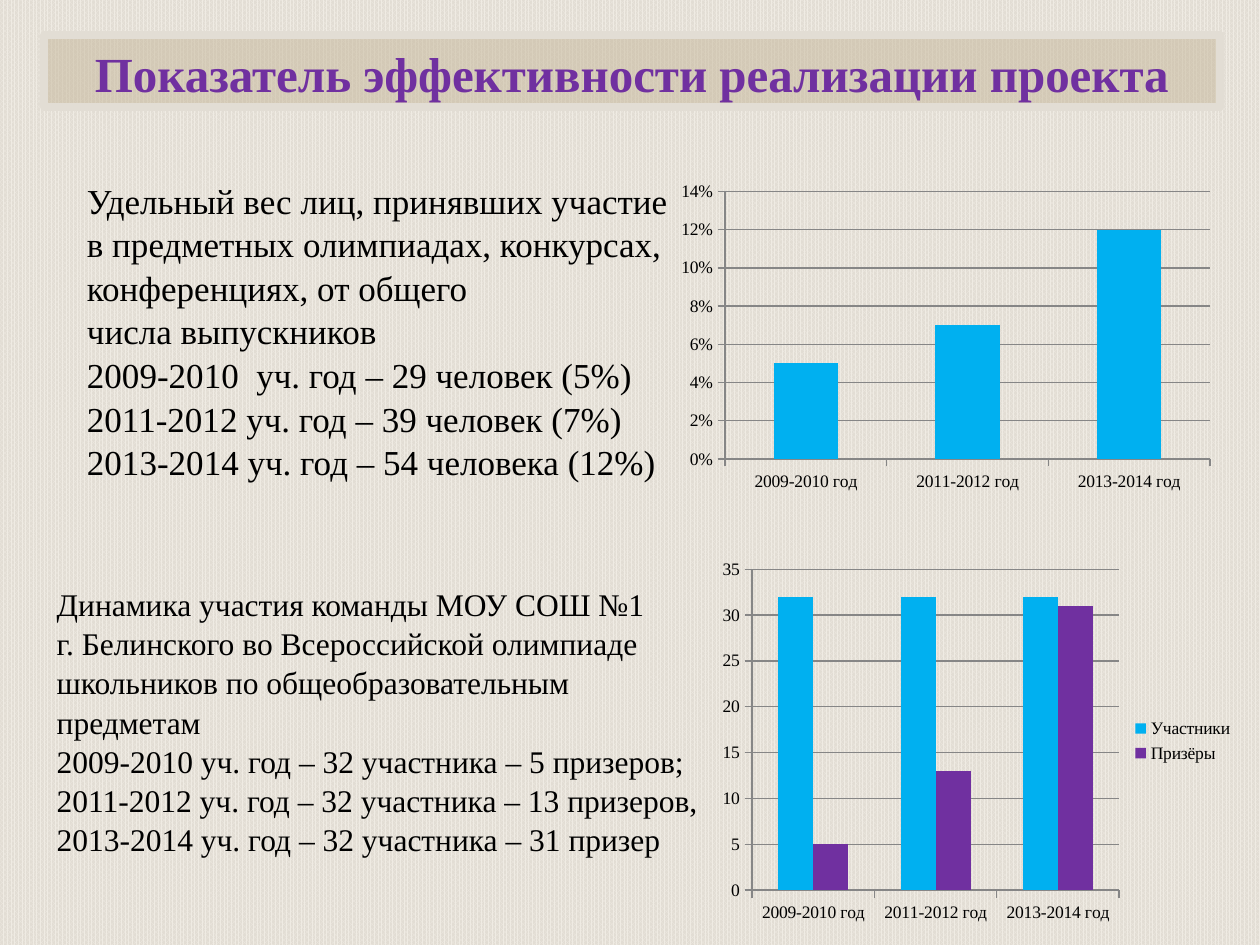
from lxml import etree
from pptx import Presentation
from pptx.chart import data
from pptx.dml import color
from pptx.enum import chart as ch, dml, text
from pptx.oxml import ns
from pptx.util import Inches, Pt

RGB = color.RGBColor
BLACK = RGB(0, 0, 0)
GRAY = RGB(0x86, 0x86, 0x86)
PURPLE = RGB(0x70, 0x30, 0xA0)
BLUE = RGB(0x00, 0xB0, 0xF0)
SAND = RGB(0xC5, 0xB6, 0x99)
PALE = RGB(0xEF, 0xEB, 0xE3)
STONE = RGB(0xE2, 0xDD, 0xD4)
FACE = "Times New Roman"

YEARS = ["2009-2010 год", "2011-2012 год", "2013-2014 год"]
TITLE = "Показатель эффективности реализации проекта"
SHARE = [
    "Удельный вес лиц, принявших участие",
    "в предметных олимпиадах, конкурсах, конференциях, от общего",
    "числа выпускников",
    "2009-2010  уч. год – 29 человек (5%)",
    "2011-2012 уч. год – 39 человек (7%)",
    "2013-2014 уч. год – 54 человека (12%)",
]
TEAM = [
    "Динамика участия команды МОУ СОШ №1",
    "г. Белинского во Всероссийской олимпиаде школьников по общеобразовательным предметам",
    "2009-2010 уч. год – 32 участника – 5 призеров;",
    "2011-2012 уч. год – 32 участника – 13 призеров,",
    "2013-2014 уч. год – 32 участника – 31 призер",
]


def apply(obj, **vals):
    """Set each named value on an object."""
    for name, val in vals.items():
        setattr(obj, name, val)


def style(font, size, tint, bold=False):
    """Give a font its face, size, colour and weight."""
    apply(font, name=FACE, size=Pt(size), bold=bold)
    font.color.rgb = tint


def place(shape, box):
    """Move a shape to a box given in inches."""
    sides = ("left", "top", "width", "height")
    apply(shape, **{side: Inches(val) for side, val in zip(sides, box)})


def fill_text(shape, lines, size, tint, anchor, align, bold=False):
    """Write plain paragraphs without bullets."""
    frame = shape.text_frame
    frame.text = "\n".join(lines)
    apply(frame, word_wrap=True, auto_size=text.MSO_AUTO_SIZE.NONE,
          vertical_anchor=anchor)
    for para in frame.paragraphs:
        apply(para, alignment=align, space_before=Pt(0), line_spacing=1.04)
        props = para._p.get_or_add_pPr()
        apply(props, marL=0) if hasattr(props, "marL") else props.set("marL", "0")
        props.set("indent", "0")
        etree.SubElement(props, ns.qn("a:buNone"))
        for run in para.runs:
            style(run.font, size, tint, bold)


def add_title(shape, box):
    """Make the framed, half-clear title band."""
    place(shape, box)
    shape.fill.solid()
    shape.fill.fore_color.rgb = SAND
    tint = shape.fill._xPr.find(".//" + ns.qn("a:srgbClr"))
    etree.SubElement(tint, ns.qn("a:alpha"), val="50000")
    shape.line.color.rgb = STONE
    shape.line.width = Pt(4.5)
    fill_text(shape, [TITLE], 28, PURPLE, text.MSO_ANCHOR.TOP,
              text.PP_ALIGN.CENTER, True)


def add_body(shape, box, lines, size):
    """Make one block of facts."""
    place(shape, box)
    fill_text(shape, lines, size, BLACK, text.MSO_ANCHOR.MIDDLE,
              text.PP_ALIGN.LEFT)


def add_bars(slide, box, series, form, step, top, legend=False):
    """Add a column chart by school year."""
    table = data.CategoryChartData(number_format=form)
    table.categories = YEARS
    for name, vals, _ in series:
        table.add_series(name, vals)
    chart = slide.shapes.add_chart(
        ch.XL_CHART_TYPE.COLUMN_CLUSTERED, *map(Inches, box), table).chart
    apply(chart, has_title=False, has_legend=legend)
    style(chart.font, 10, BLACK)
    if legend:
        apply(chart.legend, position=ch.XL_LEGEND_POSITION.RIGHT,
              include_in_layout=False)
    plot = chart.plots[0]
    apply(plot, gap_width=150, overlap=0, vary_by_categories=False)
    for bars, (_, _, tint) in zip(plot.series, series):
        bars.format.fill.solid()
        bars.format.fill.fore_color.rgb = tint
    apply(chart.value_axis, minimum_scale=0, maximum_scale=top,
          major_unit=step, has_major_gridlines=True)
    apply(chart.value_axis.tick_labels, number_format=form,
          number_format_is_linked=False)
    for axis in (chart.category_axis, chart.value_axis):
        axis.major_tick_mark = ch.XL_TICK_MARK.OUTSIDE
        axis.format.line.color.rgb = GRAY
    chart.value_axis.major_gridlines.format.line.color.rgb = GRAY


def main():
    """Build and save the slide."""
    deck = Presentation()
    apply(deck, slide_width=Inches(10), slide_height=Inches(7.5))
    slide = deck.slides.add_slide(deck.slide_layouts[3])
    back = slide.background.fill
    back.patterned()
    back.pattern = dml.MSO_PATTERN.PERCENT_80
    back.fore_color.rgb = PALE
    back.back_color.rgb = STONE
    title, share, team = slide.placeholders
    add_title(title, (0.35, 0.28, 9.33, 0.57))
    add_body(share, (0.59, 1.39, 5.06, 2.46), SHARE, 20)
    add_body(team, (0.35, 4.61, 5.3, 2.22), TEAM, 18)
    add_bars(slide, (5.32, 1.39, 4.37, 2.56),
             [("Series 1", (0.05, 0.07, 0.12), BLUE)], "0%", 0.02, 0.14)
    add_bars(slide, (5.65, 4.38, 4.24, 3),
             [("Участники", (32, 32, 32), BLUE),
              ("Призёры", (5, 13, 31), PURPLE)], "General", 5, 35, True)
    deck.save("out.pptx")


if __name__ == "__main__":
    main()
